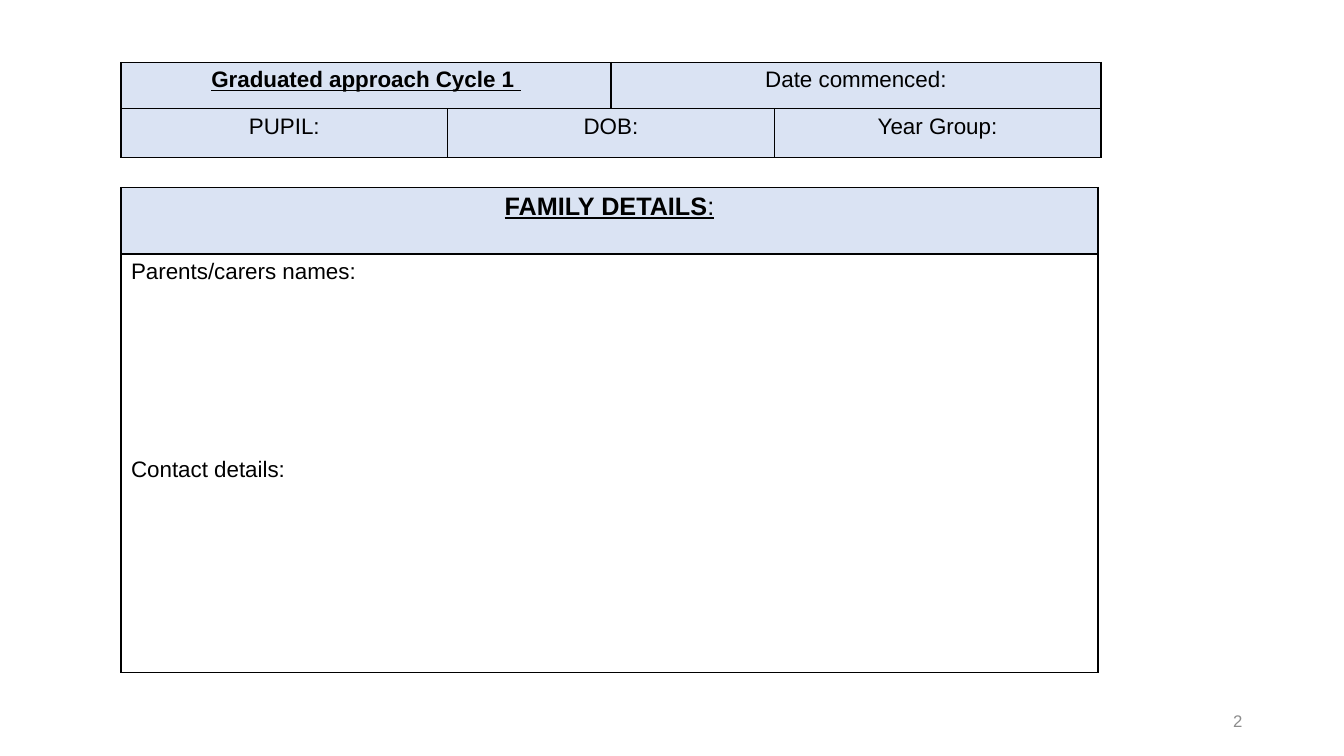
from dataclasses import dataclass

from lxml.etree import SubElement
from pptx import Presentation
from pptx.dml.color import RGBColor
from pptx.enum.text import MSO_ANCHOR, PP_ALIGN
from pptx.oxml.ns import qn
from pptx.slide import Slide
from pptx.table import _Cell
from pptx.text.text import _Paragraph
from pptx.util import Inches, Pt

BLACK = RGBColor(0x00, 0x00, 0x00)
WHITE = RGBColor(0xFF, 0xFF, 0xFF)
GREY = RGBColor(0x8C, 0x8C, 0x8C)
PALE_BLUE = RGBColor(0xDA, 0xE3, 0xF3)
FONT = "Arial"
LEFT = 1.2


@dataclass(frozen=True)
class Line:
    text: str
    size: int = 16
    heading: bool = False
    plain_end: str = ""
    align: PP_ALIGN = PP_ALIGN.CENTER
    space_before: int = 0


@dataclass(frozen=True)
class CellSpec:
    row: int
    col: int
    lines: tuple[Line, ...]
    span: int = 1
    fill: RGBColor = PALE_BLUE


@dataclass(frozen=True)
class TableSpec:
    top: float
    cols: tuple[float, ...]
    rows: tuple[float, ...]
    cells: tuple[CellSpec, ...]


TABLES = (
    TableSpec(0.62, (3.24, 1.62, 1.62, 3.24), (0.46, 0.48), (
        CellSpec(0, 0, (Line("Graduated approach Cycle 1 ", heading=True),), span=2),
        CellSpec(0, 2, (Line("Date commenced:"),), span=2),
        CellSpec(1, 0, (Line("PUPIL:"),)),
        CellSpec(1, 1, (Line("DOB:"),), span=2),
        CellSpec(1, 3, (Line("Year Group:"),)),
    )),
    TableSpec(1.86, (9.69,), (0.66, 4.15), (
        CellSpec(0, 0, (Line("FAMILY DETAILS", 18, True, ":"),)),
        CellSpec(1, 0, (
            Line("Parents/carers names:", align=PP_ALIGN.LEFT),
            Line("Contact details:", align=PP_ALIGN.LEFT, space_before=124),
        ), fill=WHITE),
    )),
)


def style_paragraph(p: _Paragraph, size: int, color: RGBColor, align: PP_ALIGN) -> None:
    p.alignment = align
    p.font.name = FONT
    p.font.size = Pt(size)
    p.font.color.rgb = color


def write_line(p: _Paragraph, line: Line) -> None:
    style_paragraph(p, line.size, BLACK, line.align)
    p.font.underline = line.heading
    if line.space_before:
        p.space_before = Pt(line.space_before)
    r = p.add_run()
    r.text = line.text
    if line.plain_end:
        r.font.bold = line.heading
        p.add_run().text = line.plain_end
    else:
        p.font.bold = line.heading


def format_cell(cell: _Cell, fill: RGBColor) -> None:
    tc_pr = cell._tc.get_or_add_tcPr()
    for side in ("a:lnL", "a:lnR", "a:lnT", "a:lnB"):
        ln = SubElement(tc_pr, qn(side), w=str(Pt(1)))
        solid = SubElement(ln, qn("a:solidFill"))
        SubElement(solid, qn("a:srgbClr"), val=str(BLACK))
    cell.fill.solid()
    cell.fill.fore_color.rgb = fill


def draw_table(s: Slide, spec: TableSpec) -> None:
    table = s.shapes.add_table(
        len(spec.rows), len(spec.cols), Inches(LEFT), Inches(spec.top),
        Inches(sum(spec.cols)), Inches(sum(spec.rows)),
    ).table
    table.first_row = table.horz_banding = False
    for column, width in zip(table.columns, spec.cols):
        column.width = Inches(width)
    for row, height in zip(table.rows, spec.rows):
        row.height = Inches(height)
    for item in spec.cells:
        cell = table.cell(item.row, item.col)
        for offset in range(item.span):
            format_cell(table.cell(item.row, item.col + offset), item.fill)
        if item.span > 1:
            cell.merge(table.cell(item.row, item.col + item.span - 1))
        tf = cell.text_frame
        for i, line in enumerate(item.lines):
            write_line(tf.add_paragraph() if i else tf.paragraphs[0], line)


def draw_page_number(s: Slide, number: str) -> None:
    tf = s.shapes.add_textbox(Inches(9.42), Inches(6.95), Inches(3), Inches(0.4)).text_frame
    tf.word_wrap = True
    tf.vertical_anchor = MSO_ANCHOR.MIDDLE
    p = tf.paragraphs[0]
    p.text = number
    style_paragraph(p, 12, GREY, PP_ALIGN.RIGHT)


def main() -> None:
    prs = Presentation()
    prs.slide_width = Inches(13.33)
    prs.slide_height = Inches(7.5)
    s = prs.slides.add_slide(prs.slide_layouts[6])
    draw_page_number(s, "2")
    for spec in TABLES:
        draw_table(s, spec)
    prs.save("out.pptx")


if __name__ == "__main__":
    main()
